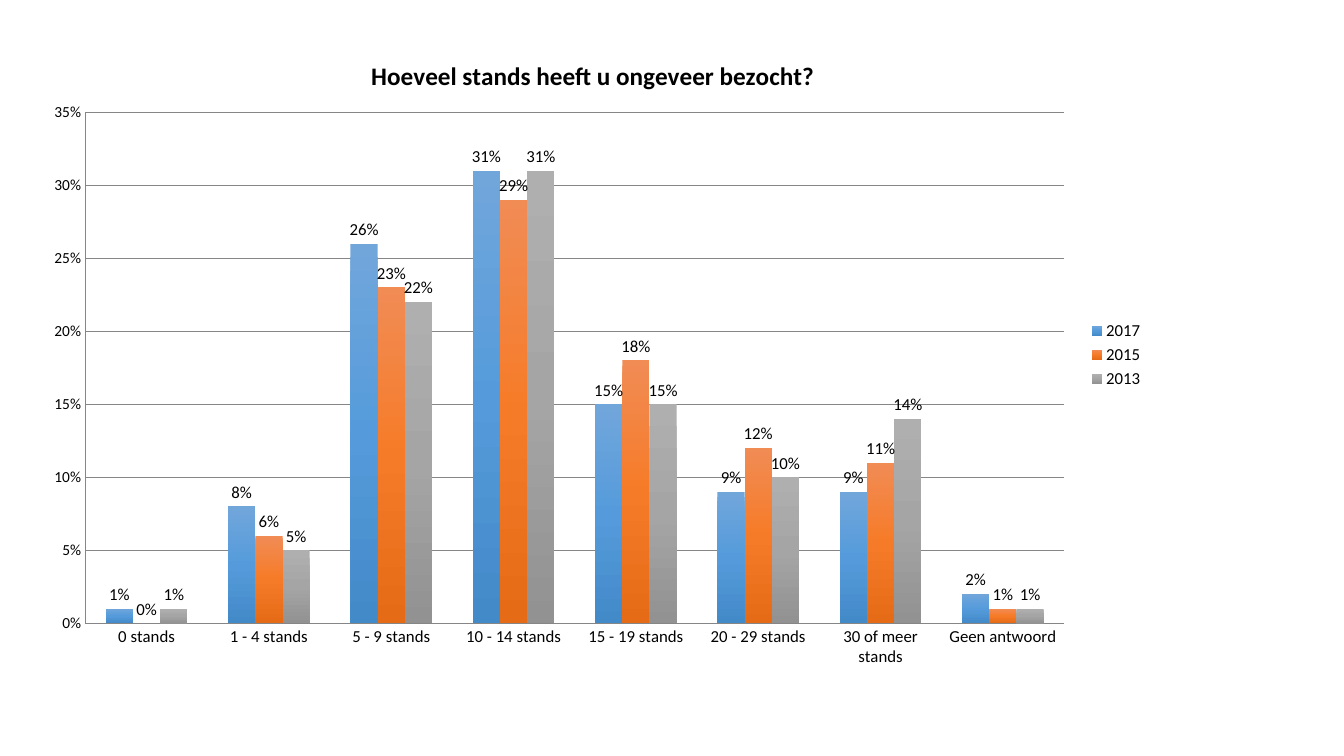
from copy import deepcopy

from lxml.etree import SubElement
from pptx import Presentation
from pptx.chart.data import CategoryChartData
from pptx.dml.color import RGBColor
from pptx.enum.chart import (XL_CHART_TYPE as CT, XL_LABEL_POSITION as LP,
                             XL_LEGEND_POSITION as LEG, XL_TICK_MARK as TM)
from pptx.oxml.ns import qn
from pptx.util import Pt

CATEGORIES = ["0 stands", "1 - 4 stands", "5 - 9 stands", "10 - 14 stands",
              "15 - 19 stands", "20 - 29 stands", "30 of meer stands",
              "Geen antwoord"]
# Year: values, gradient from top to bottom
SERIES = {
    "2017": ([0.01, 0.08, 0.26, 0.31, 0.15, 0.09, 0.09, 0.02],
             ["71A6DB", "559BDB", "438AC9"]),
    "2015": ([0, 0.06, 0.23, 0.29, 0.18, 0.12, 0.11, 0.01],
             ["F18C55", "F67B28", "E56B17"]),
    "2013": ([0.01, 0.05, 0.22, 0.31, 0.15, 0.1, 0.14, 0.01],
             ["AFAFAF", "A5A5A5", "929292"]),
}


def rgb(color):
    return RGBColor.from_string(color)


class Deck:
    font, ink, line = "Calibri", "000000", "868686"

    def __init__(self, prs):
        self.s = prs.slides.add_slide(prs.slide_layouts[6])

    def style(self, font, size, bold=False):
        font.name, font.size, font.bold = self.font, Pt(size), bold
        font.color.rgb = rgb(self.ink)

    def outline(self, fmt):
        fmt.line.color.rgb = rgb(self.line)
        fmt.line.width = Pt(0.75)

    def place(self, element, target=None, **fractions):
        """Set a manual layout, in fractions of the chart area."""
        layout = element.find(qn("c:layout"))
        if layout is None:
            layout = element.makeelement(qn("c:layout"))
            rich = element.find(qn("c:tx"))
            element.insert(0 if rich is None else 1, layout)
        manual = SubElement(layout, qn("c:manualLayout"))
        if target:
            SubElement(manual, qn("c:layoutTarget")).set("val", target)
        for key in ("x", "y"):
            SubElement(manual, qn(f"c:{key}Mode")).set("val", "edge")
        for key, value in fractions.items():
            SubElement(manual, qn(f"c:{key}")).set("val", str(value))

    def column_chart(self, x, y, w, h, categories, series):
        data = CategoryChartData(number_format="0%")
        data.categories = categories
        for name, (values, _) in series.items():
            data.add_series(name, values)
        chart = self.s.shapes.add_chart(CT.COLUMN_CLUSTERED, Pt(x), Pt(y),
                                        Pt(w), Pt(h), data).chart
        self.style(chart.font, 10)
        plot = chart.plots[0]
        plot.gap_width, plot.overlap = 150, 0
        plot.vary_by_categories = False
        for ser, (_, colors) in zip(plot.series, series.values()):
            self.gradient(ser, colors)
            self.labels(ser.data_labels)
        return chart

    def gradient(self, ser, colors):
        fill = ser.format.fill
        fill.gradient()
        fill.gradient_angle = 270
        stops = ser.format.fill.gradient_stops
        first = next(ser._element.iter(qn("a:gs")))
        middle = deepcopy(first)
        middle.set("pos", "50000")
        first.addnext(middle)
        for stop, color in zip(stops, colors):
            stop.color.rgb = rgb(color)

    def labels(self, labels):
        labels.show_value = True
        labels.number_format, labels.number_format_is_linked = "0%", False
        labels.position = LP.OUTSIDE_END
        self.style(labels.font, 12)

    def axis(self, axis, size):
        axis.major_tick_mark = axis.minor_tick_mark = TM.NONE
        self.style(axis.tick_labels.font, size)
        self.outline(axis.format)

    def title(self, chart, text, size):
        tf = chart.chart_title.text_frame
        tf.text = text
        self.style(tf.paragraphs[0].runs[0].font, size, bold=True)

    def legend(self, chart, size):
        chart.has_legend = True
        chart.legend.position = LEG.RIGHT
        chart.legend.include_in_layout = False
        self.style(chart.legend.font, size)


def main():
    prs = Presentation()
    prs.slide_width, prs.slide_height = Pt(960), Pt(540)
    deck = Deck(prs)

    # Chart with title and legend
    chart = deck.column_chart(20.9, 19.4, 803.5, 468, CATEGORIES, SERIES)
    deck.title(chart, "Hoeveel stands heeft u ongeveer bezocht?", 18)
    deck.legend(chart, 12)

    # Axes
    deck.axis(chart.category_axis, 12)
    values = chart.value_axis
    deck.axis(values, 11)
    values.minimum_scale, values.maximum_scale = 0, 0.35
    values.major_unit = 0.05
    values.tick_labels.number_format = "0%"
    values.tick_labels.number_format_is_linked = False
    values.has_major_gridlines = True
    deck.outline(values.major_gridlines.format)

    # Positions inside the chart
    area = next(chart._chartSpace.iter(qn("c:plotArea")))
    deck.place(area, "inner", x=0.05, y=0.13, w=0.87, h=0.78)
    deck.place(chart.chart_title._element, x=0.3, y=0.04)

    prs.save("out.pptx")


if __name__ == "__main__":
    main()
